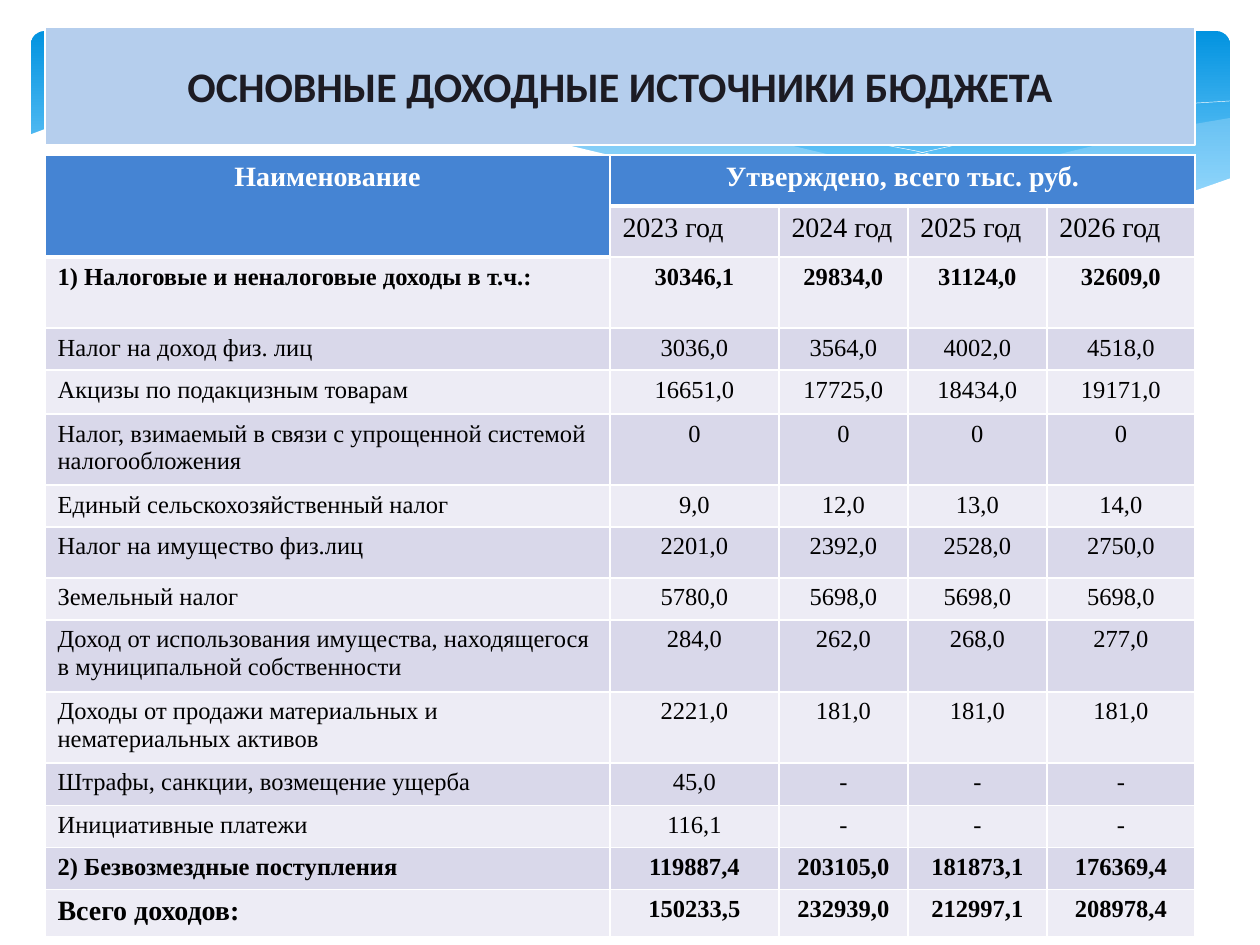
from lxml import etree
from pptx import Presentation
from pptx.dml.color import RGBColor
from pptx.enum.shapes import MSO_SHAPE
from pptx.enum.text import MSO_ANCHOR, PP_ALIGN
from pptx.oxml.ns import qn
from pptx.util import Pt

PX = 914400 / 126
ROUNDED = MSO_SHAPE.ROUNDED_RECTANGLE
CENTER, LEFT = PP_ALIGN.CENTER, PP_ALIGN.LEFT
TITLE_FONT, TABLE_FONT = "Calibri", "Times New Roman"

WHITE = RGBColor(0xFF, 0xFF, 0xFF)
BLACK = RGBColor(0, 0, 0)
SKY_TOP = RGBColor(0x02, 0x93, 0xE0)
SKY_BOTTOM = RGBColor(0x83, 0xD3, 0xFE)
WAVE = RGBColor(0xC6, 0xE7, 0xFC)
TITLE_FILL = RGBColor(0xB5, 0xCE, 0xED)
TITLE_TEXT = RGBColor(0x1C, 0x1B, 0x23)
HEADER_FILL = RGBColor(0x45, 0x84, 0xD3)
BAND_DARK = RGBColor(0xD9, 0xD8, 0xEA)
BAND_LIGHT = RGBColor(0xED, 0xEC, 0xF5)

# Wave outlines, in px from the top left corner of the sky panel
RIGHT_WAVE = [(1199, 87), (1164, 93), (1111, 103), (1054, 117), (983, 134), (918, 149),
              (858, 160), (802, 171), (857, 177), (923, 182), (995, 186), (1058, 184),
              (1109, 176), (1156, 163), (1199, 147)]
MIDDLE_WAVE = [(1094, 179), (1024, 170), (945, 157), (858, 138), (762, 115), (705, 103),
               (651, 91), (585, 81), (526, 74), (472, 70), (424, 70), (382, 71),
               (329, 77), (400, 87), (478, 102), (535, 115), (637, 139), (726, 158),
               (807, 172), (881, 181), (958, 186), (1025, 186), (1073, 182)]
FALLING_LINE = [(358, 82), (382, 77), (426, 74), (493, 72), (560, 74), (612, 77),
                (670, 84), (735, 92), (807, 105), (885, 120), (971, 140), (1064, 164),
                (1112, 178)]
RISING_LINE = [(741, 159), (792, 147), (876, 125), (947, 109), (1022, 94), (1097, 80),
               (1151, 73), (1199, 70)]
WHITE_WAVE = [(1200, 147), (1166, 159), (1128, 169), (1087, 178), (1040, 182), (988, 184),
              (928, 183), (861, 177), (785, 166), (699, 150), (603, 130), (532, 113),
              (462, 97), (397, 85), (337, 76), (284, 71), (235, 68), (192, 67), (153, 69),
              (119, 72), (88, 76), (65, 81), (43, 86), (27, 92), (14, 98), (-2, 104),
              (-2, 251), (1200, 251)]

COLUMN_WIDTHS = [565, 169, 129, 139, 148]
ROW_HEIGHTS = [51, 51, 71, 42, 44, 71, 42, 51, 42, 72, 71, 43, 42, 42, 47]
YEARS = ["2023 год", "2024 год", "2025 год", "2026 год"]
INCOME = [
    ("1) Налоговые и неналоговые доходы в т.ч.:", "30346,1", "29834,0", "31124,0", "32609,0"),
    ("Налог на доход физ. лиц", "3036,0", "3564,0", "4002,0", "4518,0"),
    ("Акцизы по подакцизным товарам", "16651,0", "17725,0", "18434,0", "19171,0"),
    ("Налог, взимаемый в связи с упрощенной системой налогообложения", "0", "0", "0", "0"),
    ("Единый сельскохозяйственный налог", "9,0", "12,0", "13,0", "14,0"),
    ("Налог на имущество физ.лиц", "2201,0", "2392,0", "2528,0", "2750,0"),
    ("Земельный налог", "5780,0", "5698,0", "5698,0", "5698,0"),
    ("Доход от использования имущества, находящегося в муниципальной собственности",
     "284,0", "262,0", "268,0", "277,0"),
    ("Доходы от продажи материальных и нематериальных активов",
     "2221,0", "181,0", "181,0", "181,0"),
    ("Штрафы, санкции, возмещение ущерба", "45,0", "-", "-", "-"),
    ("Инициативные платежи", "116,1", "-", "-", "-"),
    ("2) Безвозмездные поступления", "119887,4", "203105,0", "181873,1", "176369,4"),
    ("Всего доходов:", "150233,5", "232939,0", "212997,1", "208978,4"),
]
BOLD_ROWS = {0, len(INCOME) - 2, len(INCOME) - 1}
TOTAL_ROW = len(INCOME) - 1


def emu(px):
    return round(px * PX)


def emu_box(box):
    return [emu(length) for length in box]


def add_outline(slide, box, points, closed=True):
    """Draw a polygon or open line through points given relative to the box."""
    left, top = box[:2]
    (start_x, start_y), *rest = [(left + x, top + y) for x, y in points]
    builder = slide.shapes.build_freeform(start_x, start_y, scale=PX)
    builder.add_line_segments(rest, close=closed)
    outline = builder.convert_to_shape()
    outline.shadow.inherit = False
    return outline


def add_background(slide, box):
    # Sky panel
    sky = slide.shapes.add_shape(ROUNDED, *emu_box(box))
    sky.shadow.inherit = False
    sky.adjustments[0] = 0.07
    sky.line.fill.background()
    sky.fill.gradient()
    sky.fill.gradient_angle = 270
    stops = sky.fill.gradient_stops
    for stop, position, color in zip(stops, (0, 0.9), (SKY_TOP, SKY_BOTTOM)):
        stop.position = position
        stop.color.rgb = color

    # Translucent waves
    for points, opacity in ((RIGHT_WAVE, 29), (MIDDLE_WAVE, 40)):
        wave = add_outline(slide, box, points)
        wave.line.fill.background()
        wave.fill.solid()
        wave.fill.fore_color.rgb = WAVE
        color = wave.fill._xPr.find(".//" + qn("a:srgbClr"))
        etree.SubElement(color, qn("a:alpha"), val=str(opacity * 1000))

    # Thin wave lines
    for points in (FALLING_LINE, RISING_LINE):
        wave_line = add_outline(slide, box, points, closed=False)
        wave_line.fill.background()
        wave_line.line.color.rgb = WHITE
        wave_line.line.width = Pt(0.25)

    # White wave that cuts off the sky
    white_wave = add_outline(slide, box, WHITE_WAVE)
    white_wave.line.fill.background()
    white_wave.fill.solid()
    white_wave.fill.fore_color.rgb = WHITE


def add_title(slide, box):
    title = slide.shapes.title
    slide.shapes._spTree.append(title._element)  # in front of the background
    title.left, title.top, title.width, title.height = emu_box(box)
    geometry = etree.SubElement(title._element.spPr, qn("a:prstGeom"), prst="roundRect")
    etree.SubElement(geometry, qn("a:avLst"))
    title.fill.solid()
    title.fill.fore_color.rgb = TITLE_FILL
    title.line.color.rgb = WHITE
    title.line.width = Pt(1.25)
    frame = title.text_frame
    frame.text = "ОСНОВНЫЕ ДОХОДНЫЕ ИСТОЧНИКИ БЮДЖЕТА"
    frame.vertical_anchor = MSO_ANCHOR.MIDDLE
    format_paragraph(frame.paragraphs[0], TITLE_FONT, 24, TITLE_TEXT, True, CENTER)


def format_paragraph(paragraph, font_name, size, color, bold, align):
    paragraph.alignment = align
    paragraph.font.name = font_name
    paragraph.font.size = Pt(size)
    paragraph.font.color.rgb = color
    paragraph.font.bold = bold


def set_borders(cell, top=0.96, bottom=0.96):
    properties = cell._tc.get_or_add_tcPr()
    sides = (("lnL", 0.96), ("lnR", 0.96), ("lnT", top), ("lnB", bottom))
    for index, (side, width) in enumerate(sides):
        border = etree.Element(qn("a:" + side), w=str(Pt(width)))
        fill = etree.SubElement(border, qn("a:solidFill"))
        etree.SubElement(fill, qn("a:srgbClr"), val=str(WHITE))
        properties.insert(index, border)


def fill_cell(cell, text, fill, size=14, color=BLACK, bold=False, align=LEFT):
    cell.fill.solid()
    cell.fill.fore_color.rgb = fill
    cell.text = text
    format_paragraph(cell.text_frame.paragraphs[0], TABLE_FONT, size, color, bold, align)


def add_income_table(slide, box):
    table = slide.shapes.add_table(len(ROW_HEIGHTS), len(COLUMN_WIDTHS), *emu_box(box)).table
    for column, width in zip(table.columns, COLUMN_WIDTHS):
        column.width = emu(width)
    for row, height in zip(table.rows, ROW_HEIGHTS):
        row.height = emu(height)

    # Header rows
    table.cell(0, 0).merge(table.cell(1, 0))
    table.cell(0, 1).merge(table.cell(0, len(YEARS)))
    for column, text in enumerate(("Наименование", "Утверждено, всего тыс. руб.")):
        fill_cell(table.cell(0, column), text, HEADER_FILL, 16, WHITE, True, CENTER)
    for column, year in enumerate(YEARS, 1):
        fill_cell(table.cell(1, column), year, BAND_DARK, 16)

    # Income rows
    for index, values in enumerate(INCOME):
        band = BAND_DARK if index % 2 else BAND_LIGHT
        for column, text in enumerate(values):
            size = 16 if index == TOTAL_ROW and column == 0 else 14
            fill_cell(table.cell(index + 2, column), text, band, size,
                      bold=index in BOLD_ROWS, align=CENTER if column else LEFT)

    # Borders, heavier under the header
    for row in range(len(ROW_HEIGHTS)):
        for column in range(len(COLUMN_WIDTHS)):
            header_rows = 1 if column else 2
            set_borders(table.cell(row, column),
                        top=3 if row == header_rows else 0.96,
                        bottom=3 if row in (0, header_rows - 1) else 0.96)


def main():
    presentation = Presentation()
    presentation.slide_width, presentation.slide_height = emu(1260), emu(945)
    slide = presentation.slides.add_slide(presentation.slide_layouts[5])
    add_background(slide, (31, 31, 1199, 197))
    add_title(slide, (45, 27, 1150, 118))
    add_income_table(slide, (45, 155, sum(COLUMN_WIDTHS), sum(ROW_HEIGHTS)))
    presentation.save("out.pptx")


if __name__ == "__main__":
    main()
